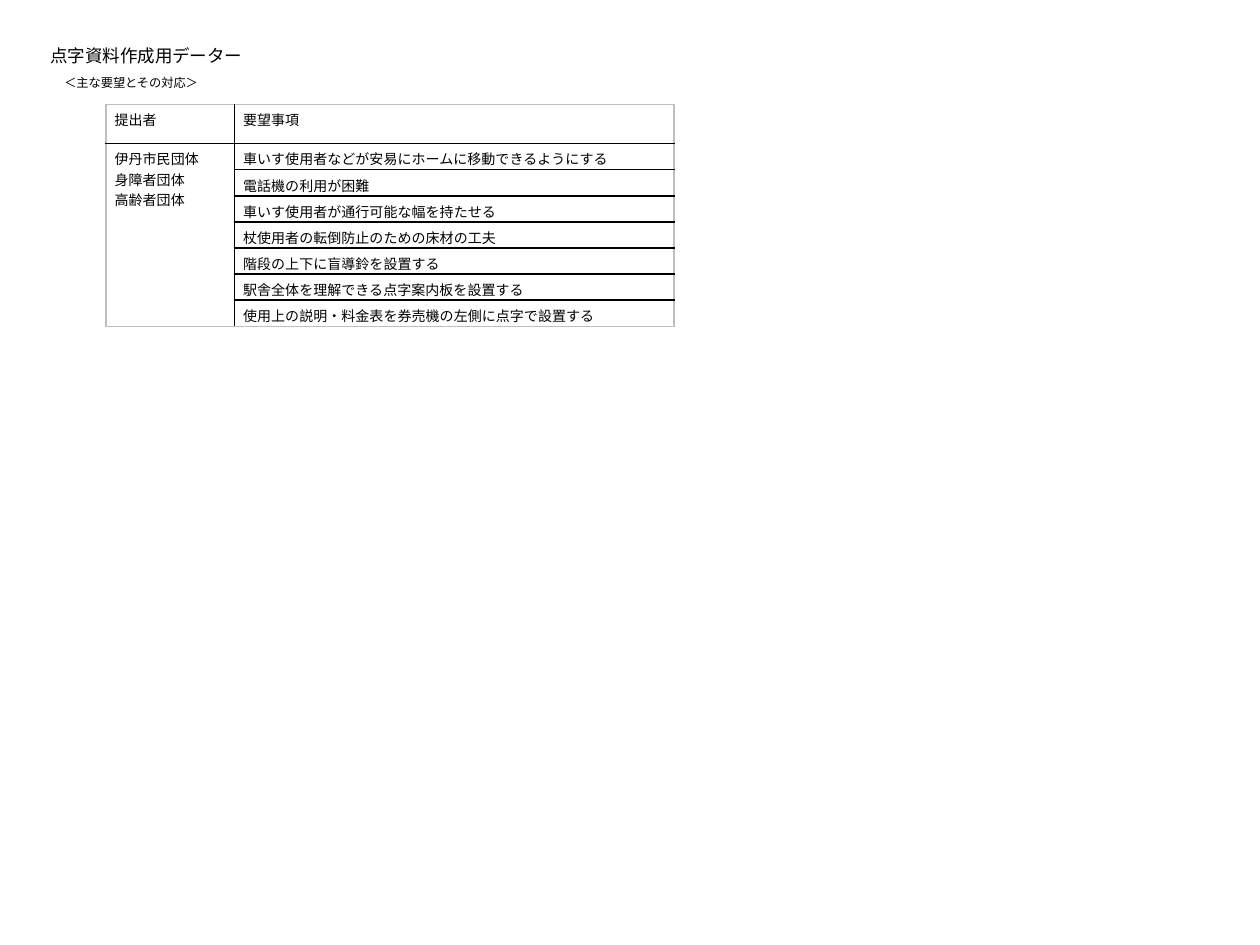
from dataclasses import dataclass

from lxml.etree import SubElement
from pptx import Presentation
from pptx.dml.color import RGBColor as Color
from pptx.enum.text import MSO_ANCHOR as Anchor
from pptx.oxml.ns import qn
from pptx.util import Inches, Pt

TITLE = "点字資料作成用データー"
SUBTITLE = "＜主な要望とその対応＞"
HEADINGS = ["提出者", "要望事項"]
SUBMITTERS = ["伊丹市民団体", "身障者団体", "高齢者団体"]
REQUESTS = [
    "車いす使用者などが安易にホームに移動できるようにする",
    "電話機の利用が困難",
    "車いす使用者が通行可能な幅を持たせる",
    "杖使用者の転倒防止のための床材の工夫",
    "階段の上下に盲導鈴を設置する",
    "駅舎全体を理解できる点字案内板を設置する",
    "使用上の説明・料金表を券売機の左側に点字で設置する",
]


@dataclass(frozen=True)
class Theme:
    font: str = "Calibri"
    ink: str = "000000"
    frame: str = "BFBFBF"
    title: float = 10
    subtitle: float = 7
    cell: float = 8
    rule: float = 1


THEME = Theme()
SLIDE = (10, 7.5)
TITLE_AREA = (0.33, 0.32, 9.39, 6.8)
SUBTITLE_AREA = (0.44, 0.56, 2.02, 0.19)
TABLE_CORNER = (0.84, 0.83)
COLUMNS = [1.02, 3.49]
HEADER_HEIGHT = 0.31
REQUEST_HEIGHT = 1.45 / len(REQUESTS)
INSET = {"left": 0.07, "top": 0.04, "right": 0.07, "bottom": 0}


def write(frame, lines, size, color=THEME.ink, font=THEME.font):
    for index, line in enumerate(lines):
        para = frame.add_paragraph() if index else frame.paragraphs[0]
        span = para.add_run()
        span.text = line
        span.font.name = font
        span.font.size = Pt(size)
        span.font.color.rgb = Color.from_string(color)


def set_margins(target):
    for side, length in INSET.items():
        setattr(target, f"margin_{side}", Inches(length))


def add_label(page, text, area, size):
    box = page.shapes.add_textbox(*map(Inches, area))
    frame = box.text_frame
    frame.word_wrap = True
    set_margins(frame)
    write(frame, [text], size)


def style_cell(cell, outer):
    cell.fill.background()
    cell.vertical_anchor = Anchor.TOP
    set_margins(cell)
    properties = cell._tc.get_or_add_tcPr()
    for index, side in enumerate(("lnL", "lnR", "lnT", "lnB")):
        line = properties.makeelement(qn(f"a:{side}"), {"w": str(Pt(THEME.rule))})
        fill = SubElement(line, qn("a:solidFill"))
        color = THEME.frame if side in outer else THEME.ink
        SubElement(fill, qn("a:srgbClr"), val=color)
        properties.insert(index, line)


def add_requests(page):
    heights = [HEADER_HEIGHT] + [REQUEST_HEIGHT] * len(REQUESTS)
    size = (sum(COLUMNS), sum(heights))
    holder = page.shapes.add_table(
        len(heights), len(COLUMNS), *map(Inches, TABLE_CORNER + size)
    )
    table = holder.table
    table.first_row = table.horz_banding = False
    for column, width in zip(table.columns, COLUMNS):
        column.width = Inches(width)
    for row, height in zip(table.rows, heights):
        row.height = Inches(height)
    last = len(heights) - 1
    for row in range(len(heights)):
        for column in range(len(COLUMNS)):
            outer = {"lnR" if column else "lnL"}
            outer |= {"lnT"} if row == 0 else set()
            outer |= {"lnB"} if row == last or (row and not column) else set()
            style_cell(table.cell(row, column), outer)
    table.cell(1, 0).merge(table.cell(last, 0))
    for column, heading in enumerate(HEADINGS):
        write(table.cell(0, column).text_frame, [heading], THEME.cell)
    write(table.cell(1, 0).text_frame, SUBMITTERS, THEME.cell)
    for row, request in enumerate(REQUESTS, start=1):
        write(table.cell(row, 1).text_frame, [request], THEME.cell)


def main():
    deck = Presentation()
    deck.slide_width, deck.slide_height = map(Inches, SLIDE)
    page = deck.slides.add_slide(deck.slide_layouts[6])
    add_label(page, TITLE, TITLE_AREA, THEME.title)
    add_requests(page)
    add_label(page, SUBTITLE, SUBTITLE_AREA, THEME.subtitle)
    deck.save("out.pptx")


if __name__ == "__main__":
    main()
